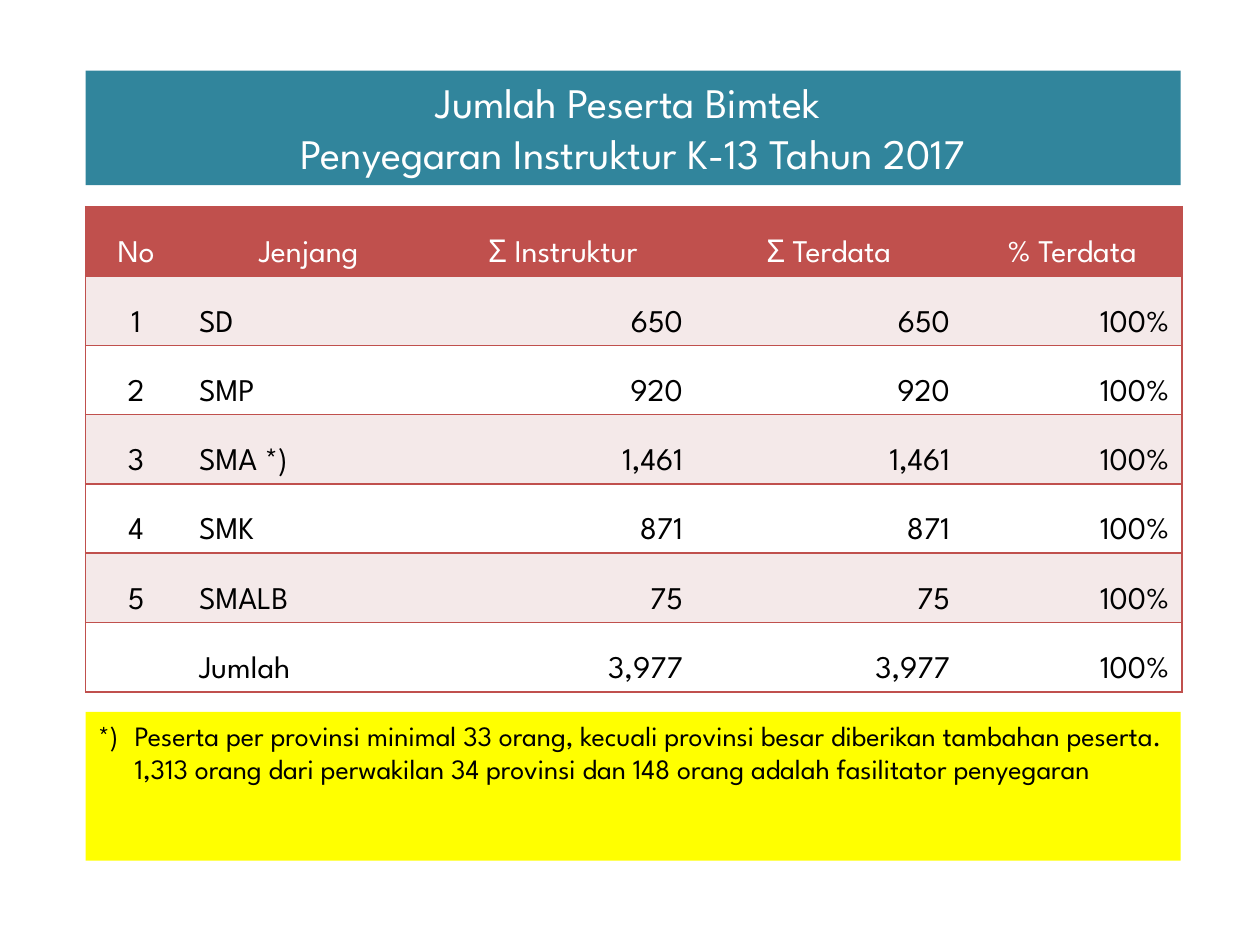
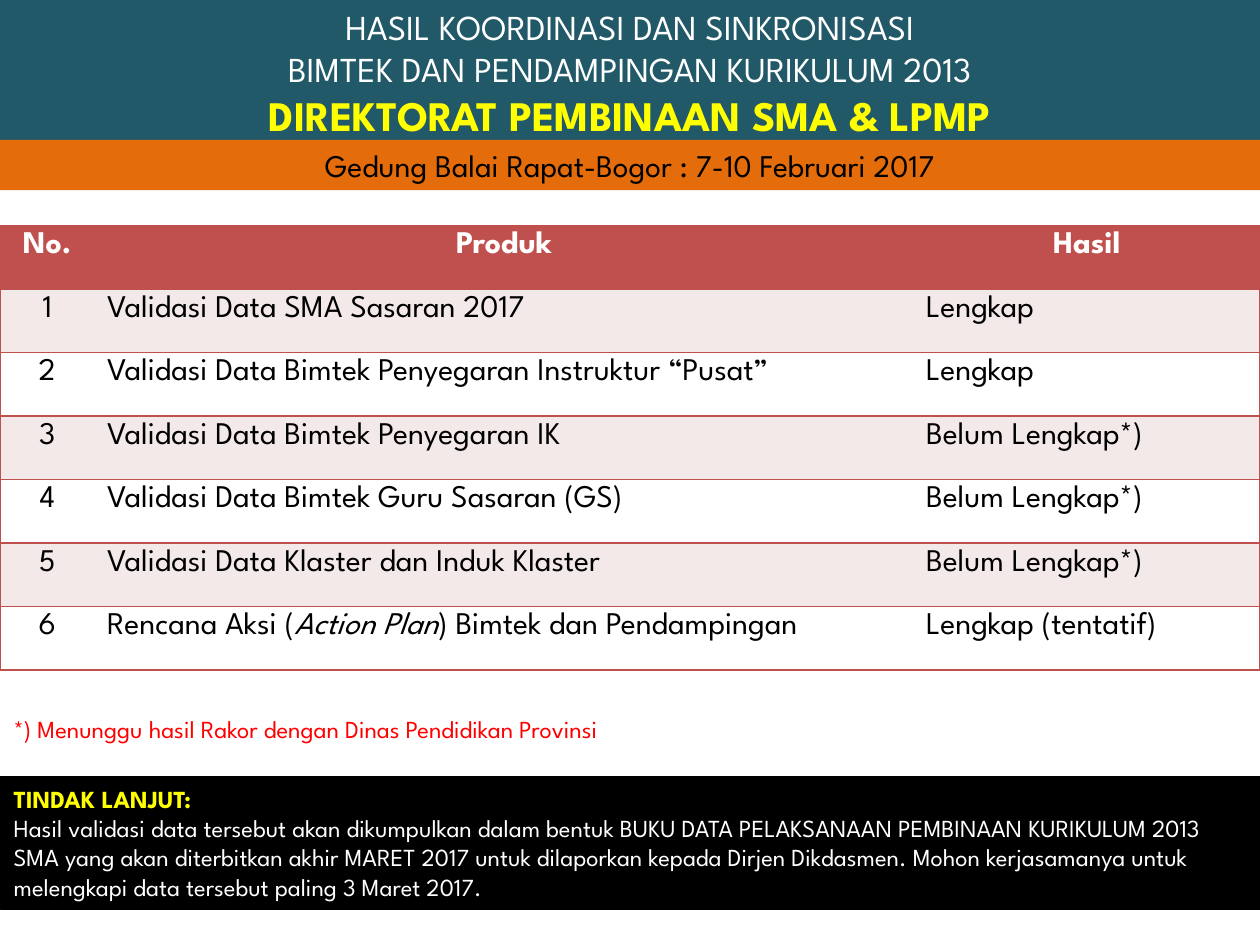
from lxml.etree import SubElement
from pptx import Presentation
from pptx.dml.color import RGBColor
from pptx.enum.shapes import MSO_SHAPE
from pptx.enum.text import MSO_ANCHOR as Anchor, MSO_AUTO_SIZE as AutoSize, PP_ALIGN as Align
from pptx.oxml.ns import qn
from pptx.util import Inches, Pt

FONT = "League Spartan"
COLORS = {
    "teal": "31859C", "dark teal": "215968", "orange": "E46C0A", "red": "C0504D",
    "pink": "F4E9E9", "yellow": "FFFF00", "note red": "FF0000",
    "white": "FFFFFF", "black": "000000",
}
COLORS = {name: RGBColor.from_string(value) for name, value in COLORS.items()}
NO_STYLE = "{2D5ABB26-0587-4C30-8999-92F81FD0307C}"
TITLE_ONLY = 5


def write(frame, text, size=18, color="black", bold=False, align=Align.LEFT,
          line_spacing=None, space_after=None, hanging=None):
    """Add one paragraph; text between underscores is italic."""
    paragraph = frame.paragraphs[-1]
    if paragraph.runs:
        paragraph = frame.add_paragraph()
    paragraph.alignment = align
    paragraph.line_spacing = line_spacing
    paragraph.space_after = space_after
    if hanging:
        properties = paragraph._p.get_or_add_pPr()
        properties.set("marL", str(hanging))
        properties.set("indent", str(-hanging))
    for index, piece in enumerate(text.split("_")):
        run = paragraph.add_run()
        run.text = piece
        font = run.font
        font.name, font.size, font.bold, font.italic = FONT, Pt(size), bold, index % 2 == 1
        font.color.rgb = COLORS[color]


def add_grid(slide, rows, widths, aligns, box, anchor, bottom, header_bold, **spacing):
    """Add a red-ruled table with a header row and striped body rows."""
    frame = slide.shapes.add_table(len(rows), len(widths), *map(Inches, box))
    table = frame.table
    table.first_row = table.horz_banding = False
    for style in frame.element.iter(qn("a:tableStyleId")):
        style.text = NO_STYLE
    for column, width in zip(table.columns, widths):
        column.width = Inches(width)
    for row_index, row in enumerate(rows):
        is_header = row_index == 0
        fill = "red" if is_header else ("white", "pink")[row_index % 2]
        for column_index, text in enumerate(row):
            cell = table.cell(row_index, column_index)
            cell.vertical_anchor = anchor
            cell.margin_bottom = Inches(bottom)
            cell.fill.solid()
            cell.fill.fore_color.rgb = COLORS[fill]
            if text:
                write(cell.text_frame, text, color="white" if is_header else "black",
                      bold=is_header and header_bold,
                      align=Align.CENTER if is_header else aligns[column_index], **spacing)
            # Rules above and below every cell, and at the outer sides
            sides = ["lnL"] * (column_index == 0)
            sides += ["lnR"] * (column_index == len(row) - 1) + ["lnT", "lnB"]
            properties = cell._tc.get_or_add_tcPr()
            for position, side in enumerate(sides):
                line = SubElement(properties, qn(f"a:{side}"), w=str(Pt(1)))
                solid = SubElement(line, qn("a:solidFill"))
                SubElement(solid, qn("a:srgbClr"), val=str(COLORS["red"]))
                properties.insert(position, line)


presentation = Presentation()
presentation.slide_width, presentation.slide_height = Inches(10), Inches(7.5)
layout = presentation.slide_layouts[TITLE_ONLY]
participants, results = [presentation.slides.add_slide(layout) for _ in range(2)]

# Filled bands: the two titles, the notes and the venue line
MARGIN, WIDTH = 0.68, 8.69
bands = {}
for name, slide, fill, box in [
    ("participants title", participants, "teal", (MARGIN, 0.56, WIDTH, 0.91)),
    ("participants note", participants, "yellow", (MARGIN, 5.65, WIDTH, 1.18)),
    ("results title", results, "dark teal", (0, -0.01, 10, 1.18)),
    ("venue", results, "orange", (0, 1.11, 10, 0.4)),
    ("follow-up", results, "black", (0.01, 6.17, 9.99, 1.04)),
]:
    left, top, width, height = map(Inches, box)
    if name.endswith("title"):
        shape = slide.shapes.title
        shape.left, shape.top, shape.width, shape.height = left, top, width, height
    else:
        shape = slide.shapes.add_shape(MSO_SHAPE.RECTANGLE, left, top, width, height)
        shape.shadow.inherit = False
    shape.fill.solid()
    shape.fill.fore_color.rgb = COLORS[fill]
    shape.line.fill.background()
    frame = bands[name] = shape.text_frame
    frame.word_wrap = True
    frame.auto_size = AutoSize.NONE
    frame.vertical_anchor = Anchor.TOP
    if name == "follow-up":
        shape.line.color.rgb = COLORS["black"]
        shape.line.width = Pt(2)

# Slide 1: participants per school level
for text in ("Jumlah Peserta Bimtek ", "Penyegaran Instruktur K-13 Tahun 2017"):
    write(bands["participants title"], text, size=24, color="white", align=Align.CENTER)

levels = [("1", "SD", "650"), ("2", "SMP", "920"), ("3", "SMA *)", "1,461"),
          ("4", "SMK", "871"), ("5", "SMALB", "75"), ("", "Jumlah", "3,977")]
add_grid(
    participants,
    [("No", "Jenjang", "Σ Instruktur", "Σ Terdata", "% Terdata")]
    + [(number, level, count, count, "100%") for number, level, count in levels],
    widths=(0.8, 1.94, 2.1, 2.12, 1.74),
    aligns=(Align.CENTER, Align.LEFT, Align.RIGHT, Align.RIGHT, Align.RIGHT),
    box=(MARGIN, 1.64, WIDTH, 3.85), anchor=Anchor.BOTTOM, bottom=0.05,
    header_bold=False, line_spacing=1.5,
)

for text in (
    "*) \tPeserta per provinsi minimal 33 orang, kecuali provinsi besar diberikan tambahan peserta.",
    "\t1,313 orang dari perwakilan 34 provinsi dan 148 orang adalah fasilitator penyegaran",
):
    write(bands["participants note"], text, size=16, hanging=Inches(0.29))

# Slide 2: results of the coordination meeting
for text in ("HASIL KOORDINASI DAN SINKRONISASI", "BIMTEK DAN PENDAMPINGAN KURIKULUM 2013"):
    write(bands["results title"], text, size=20, color="white", align=Align.CENTER)
write(bands["results title"], "DIREKTORAT PEMBINAAN SMA & LPMP",
      size=24, color="yellow", bold=True, align=Align.CENTER)
write(bands["venue"], "Gedung Balai Rapat-Bogor : 7-10 Februari 2017", align=Align.CENTER)

products = [
    ("Validasi Data SMA Sasaran 2017", "Lengkap"),
    ("Validasi Data Bimtek Penyegaran Instruktur “Pusat”", "Lengkap"),
    ("Validasi Data Bimtek Penyegaran IK", "Belum Lengkap*)"),
    ("Validasi Data Bimtek Guru Sasaran (GS)", "Belum Lengkap*)"),
    ("Validasi Data Klaster dan Induk Klaster", "Belum Lengkap*)"),
    ("Rencana Aksi (_Action Plan_) Bimtek dan Pendampingan", "Lengkap (tentatif)"),
]
add_grid(
    results,
    [("No.", "Produk", "Hasil")]
    + [(str(number), *product) for number, product in enumerate(products, 1)],
    widths=(0.75, 6.5, 2.75), aligns=(Align.CENTER, Align.LEFT, Align.LEFT),
    box=(0, 1.79, 10, 3.53), anchor=Anchor.TOP, bottom=0.15,
    header_bold=True, space_after=Pt(12),
)

footnote = results.shapes.add_textbox(*map(Inches, (0.01, 5.62, 5.77, 0.34)))
footnote.text_frame.word_wrap = False
write(footnote.text_frame, "*) Menunggu hasil Rakor dengan Dinas Pendidikan Provinsi",
      size=14, color="note red")

write(bands["follow-up"], "TINDAK LANJUT:", size=14, color="yellow", bold=True)
write(bands["follow-up"],
      "Hasil validasi data tersebut akan dikumpulkan dalam bentuk BUKU DATA PELAKSANAAN "
      "PEMBINAAN KURIKULUM 2013 SMA yang akan diterbitkan akhir MARET 2017 untuk dilaporkan "
      "kepada Dirjen Dikdasmen. Mohon kerjasamanya untuk melengkapi data tersebut paling "
      "3 Maret 2017.", size=14, color="white")

presentation.save("out.pptx")
